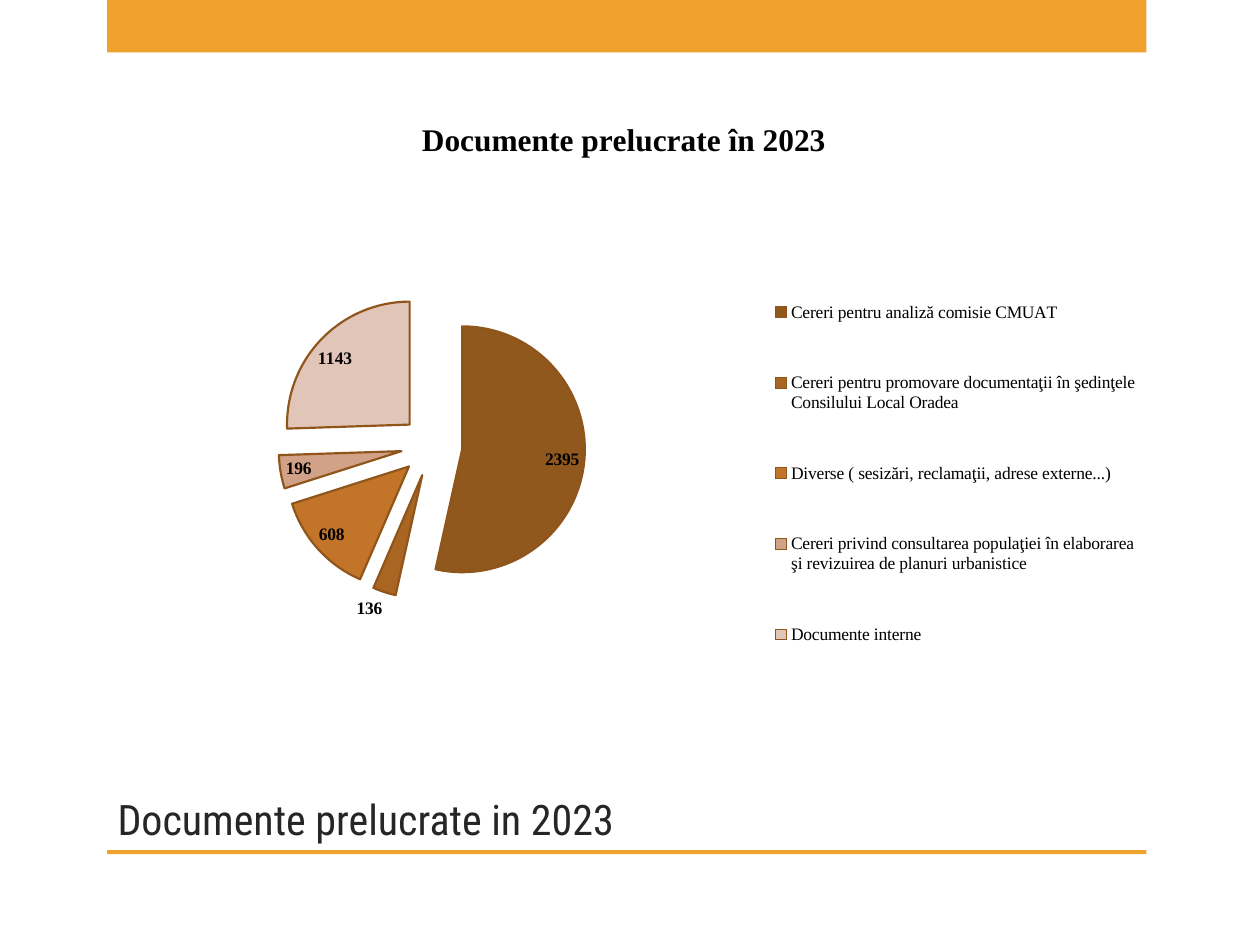
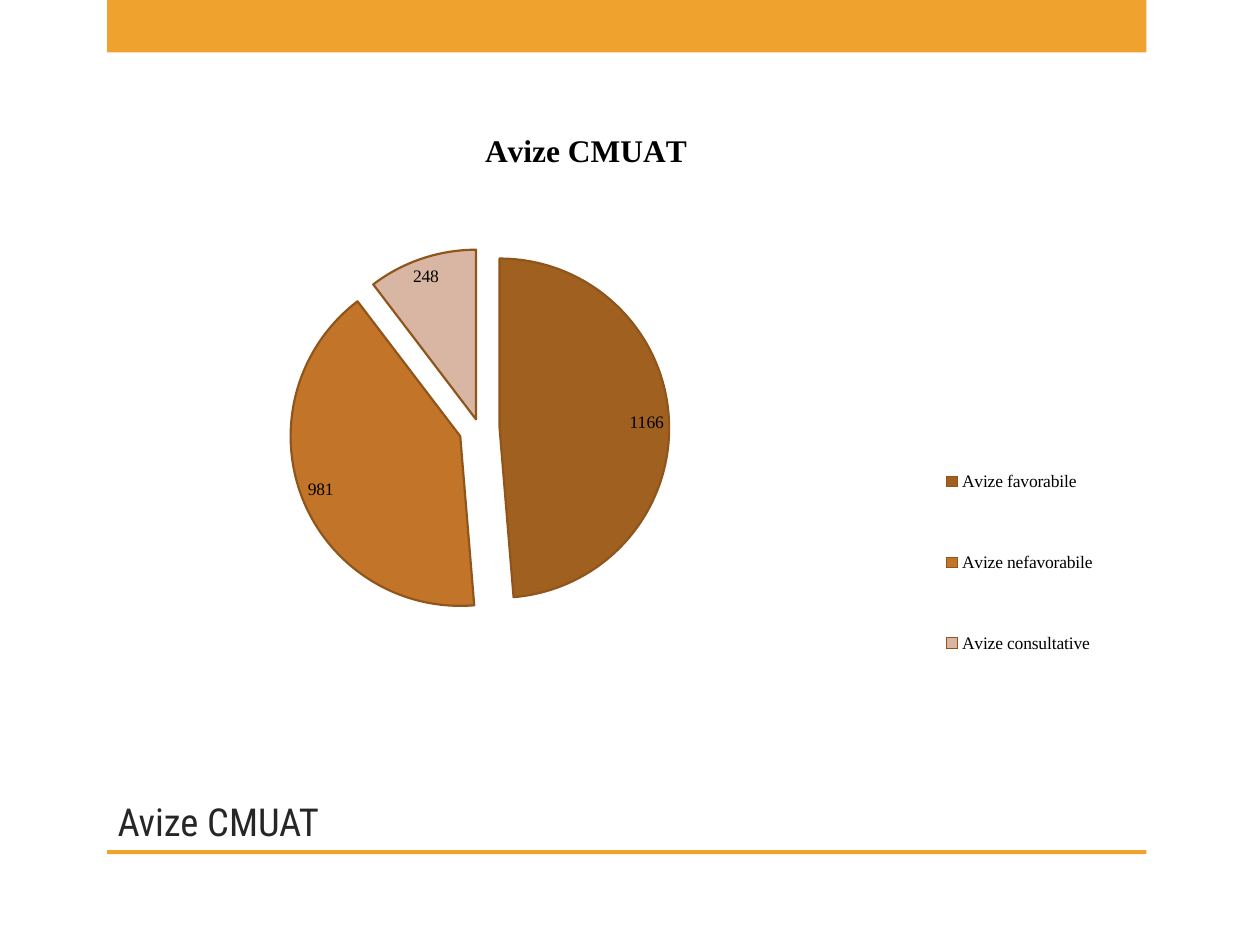
from lxml.etree import SubElement
from pptx import Presentation
from pptx.chart.data import CategoryChartData
from pptx.dml.color import RGBColor
from pptx.enum.chart import XL_CHART_TYPE, XL_LABEL_POSITION, XL_LEGEND_POSITION
from pptx.enum.shapes import MSO_SHAPE
from pptx.enum.text import MSO_ANCHOR
from pptx.oxml.ns import qn
from pptx.util import Cm, Pt

PAGES = [
    {
        "title": "Documente prelucrate in 2023",
        "title_size": 24,
        "title_height": 2.11,
        "chart_title": "Documente prelucrate în 2023",
        "series": "Series 1",
        "slices": [
            ("Cereri pentru analiză comisie CMUAT", 2395, "90581C"),
            ("Cereri pentru promovare documentaţii în şedinţele Consilului Local Oradea", 136, "A96522"),
            ("Diverse ( sesizări, reclamaţii, adrese externe...)", 608, "C27528"),
            ("Cereri privind consultarea populaţiei în elaborarea şi revizuirea de planuri urbanistice",
             196, "D2A288"),
            ("Documente interne", 1143, "E2C5B9"),
        ],
        "explosion": 25,
        "slice_explosions": {},
        "bold_labels": True,
        "chart_height": 13.77,
        "title_layout": (0.3, 0.03),
        "plot_layout": (0.06, 0.29, 0.51, 0.45),
        "legend_layout": (0.64, 0.23, 0.36, 0.65),
    },
    {
        "title": "Avize CMUAT",
        "title_size": 22,
        "title_height": 2.75,
        "chart_title": "Avize CMUAT",
        "series": "Avize CMUAT",
        "slices": [
            ("Avize favorabile", 1166, "A06020"),
            ("Avize nefavorabile", 981, "C27528"),
            ("Avize consultative", 248, "D9B6A4"),
        ],
        "explosion": 6,
        "slice_explosions": {0: 12, 1: 12},
        "bold_labels": False,
        "chart_height": 12.5,
        "title_layout": (0.36, 0.05),
        "plot_layout": (0.06, 0.25, 0.6, 0.58),
        "legend_layout": (0.76, 0.51, 0.24, 0.49),
    },
]

ACCENT = "F0A22E"
TITLE_COLOUR = "262626"
CHART_COLOUR = "000000"
SLICE_EDGE = "8F551B"
TITLE_FONT = "Roboto Condensed"
CHART_FONT = "Times New Roman"
BAND_LEFT, CONTENT_LEFT, CONTENT_WIDTH = 2.16, 2.12, 20.95
CHART_TOP, RULE_TOP = 1.9, 17.14
BANDS = [(0, 1.06), (RULE_TOP, 0.08)]


def colour(value):
    return RGBColor.from_string(value)


def style_font(font, name, size, shade, bold=False):
    font.name = name
    font.size = Pt(size)
    font.bold = bold
    font.color.rgb = colour(shade)


def add_bands(page):
    for top, height in BANDS:
        band = page.shapes.add_shape(
            MSO_SHAPE.RECTANGLE, Cm(BAND_LEFT), Cm(top), Cm(CONTENT_WIDTH), Cm(height))
        band.shadow.inherit = False
        band.fill.solid()
        band.fill.fore_color.rgb = colour(ACCENT)
        band.line.fill.background()


def add_title(page, text, *, size, height):
    box = page.shapes.add_textbox(
        Cm(CONTENT_LEFT), Cm(RULE_TOP - height), Cm(CONTENT_WIDTH), Cm(height))
    frame = box.text_frame
    frame.word_wrap = True
    frame.vertical_anchor = MSO_ANCHOR.BOTTOM
    span = frame.paragraphs[0].add_run()
    span.text = text
    style_font(span.font, TITLE_FONT, size, TITLE_COLOUR)


def place(element, bounds, before, inner=False):
    for old in element.findall(qn("c:layout")):
        element.remove(old)
    layout = SubElement(element, qn("c:layout"))
    manual = SubElement(layout, qn("c:manualLayout"))
    if inner:
        SubElement(manual, qn("c:layoutTarget"), val="inner")
    for key in ("xMode", "yMode"):
        SubElement(manual, qn(f"c:{key}"), val="edge")
    for key, value in zip("xywh", bounds):
        SubElement(manual, qn(f"c:{key}"), val=str(value))
    element.find(qn(before)).addprevious(layout)


def explode(element, percent, before):
    mark = SubElement(element, qn("c:explosion"), val=str(percent))
    element.find(qn(before)).addprevious(mark)


def add_pie(page, content):
    names, values, shades = zip(*content["slices"])
    chart_data = CategoryChartData()
    chart_data.categories = names
    chart_data.add_series(content["series"], values)
    chart = page.shapes.add_chart(
        XL_CHART_TYPE.PIE, Cm(CONTENT_LEFT), Cm(CHART_TOP),
        Cm(CONTENT_WIDTH), Cm(content["chart_height"]), chart_data).chart
    style_font(chart.font, CHART_FONT, 10, CHART_COLOUR)

    chart.has_title = True
    heading = chart.chart_title.text_frame.paragraphs[0].add_run()
    heading.text = content["chart_title"]
    style_font(heading.font, CHART_FONT, 18, CHART_COLOUR, bold=True)
    chart.chart_title.include_in_layout = True

    chart.has_legend = True
    chart.legend.position = XL_LEGEND_POSITION.RIGHT
    chart.legend.include_in_layout = True
    style_font(chart.legend.font, CHART_FONT, 10, CHART_COLOUR)

    plot = chart.plots[0]
    plot.vary_by_categories = True
    series = plot.series[0]
    for index, shade in enumerate(shades):
        area = series.points[index].format
        area.fill.solid()
        area.fill.fore_color.rgb = colour(shade)
        area.line.color.rgb = colour(SLICE_EDGE)
        area.line.width = Pt(1.25)
    explode(series._element, content["explosion"], "c:dPt")
    points = series._element.findall(qn("c:dPt"))
    for index, percent in content["slice_explosions"].items():
        explode(points[index], percent, "c:spPr")

    labels = series.data_labels
    labels.show_value = True
    labels.position = XL_LABEL_POSITION.BEST_FIT
    style_font(labels.font, CHART_FONT, 10, CHART_COLOUR, bold=content["bold_labels"])

    root = chart._chartSpace.chart
    title = root.find(qn("c:title"))
    if title.find(qn("c:overlay")) is None:
        title.find(qn("c:tx")).addnext(SubElement(title, qn("c:overlay"), val="1"))
    place(title, content["title_layout"], "c:overlay")
    place(root.plotArea, content["plot_layout"], "c:pieChart", inner=True)
    place(root.find(qn("c:legend")), content["legend_layout"], "c:overlay")


def main():
    deck = Presentation()
    deck.slide_width, deck.slide_height = Cm(25.4), Cm(19.05)
    for content in PAGES:
        page = deck.slides.add_slide(deck.slide_layouts[6])
        add_bands(page)
        add_title(page, content["title"], size=content["title_size"],
                  height=content["title_height"])
        add_pie(page, content)
    deck.save("out.pptx")


if __name__ == "__main__":
    main()
